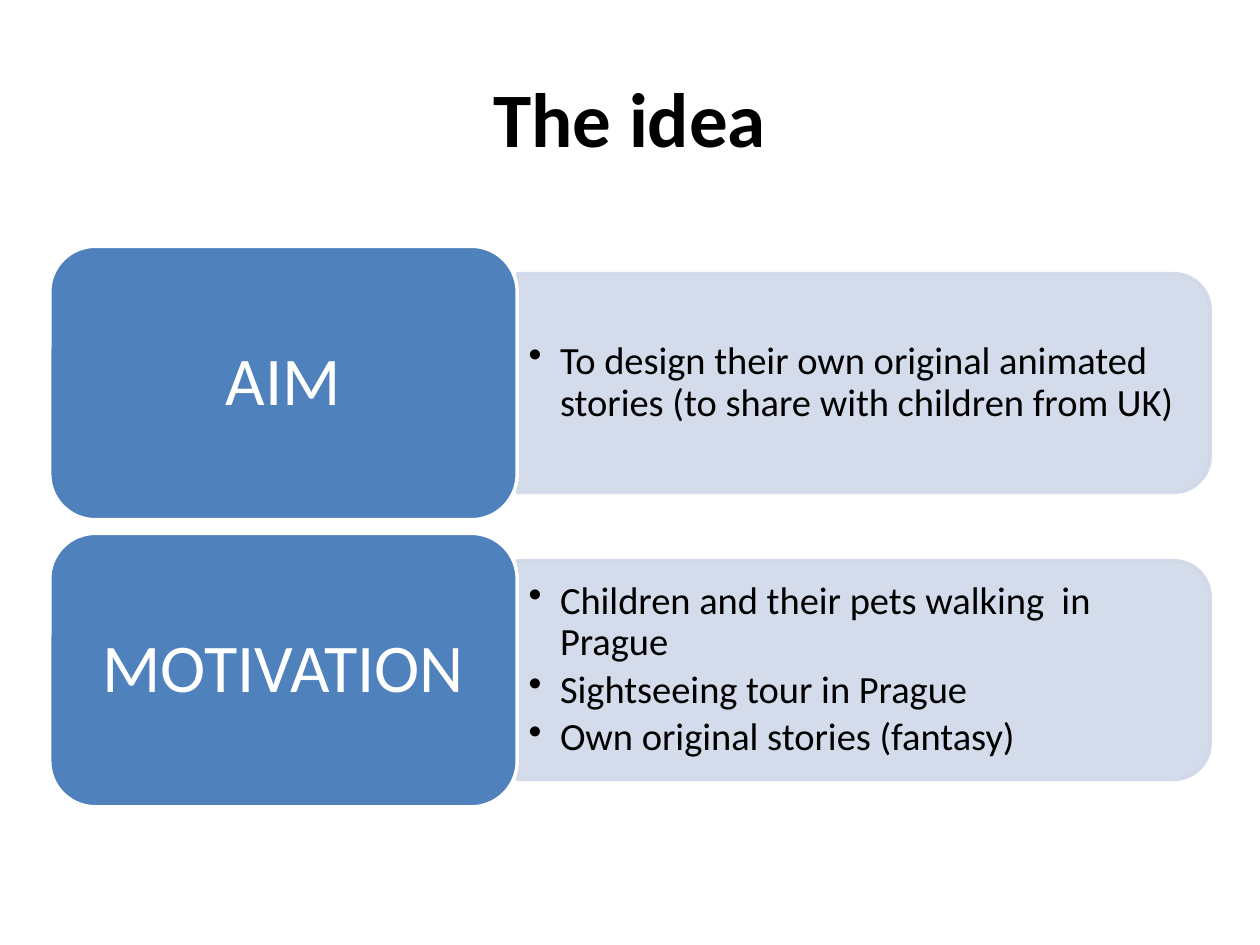
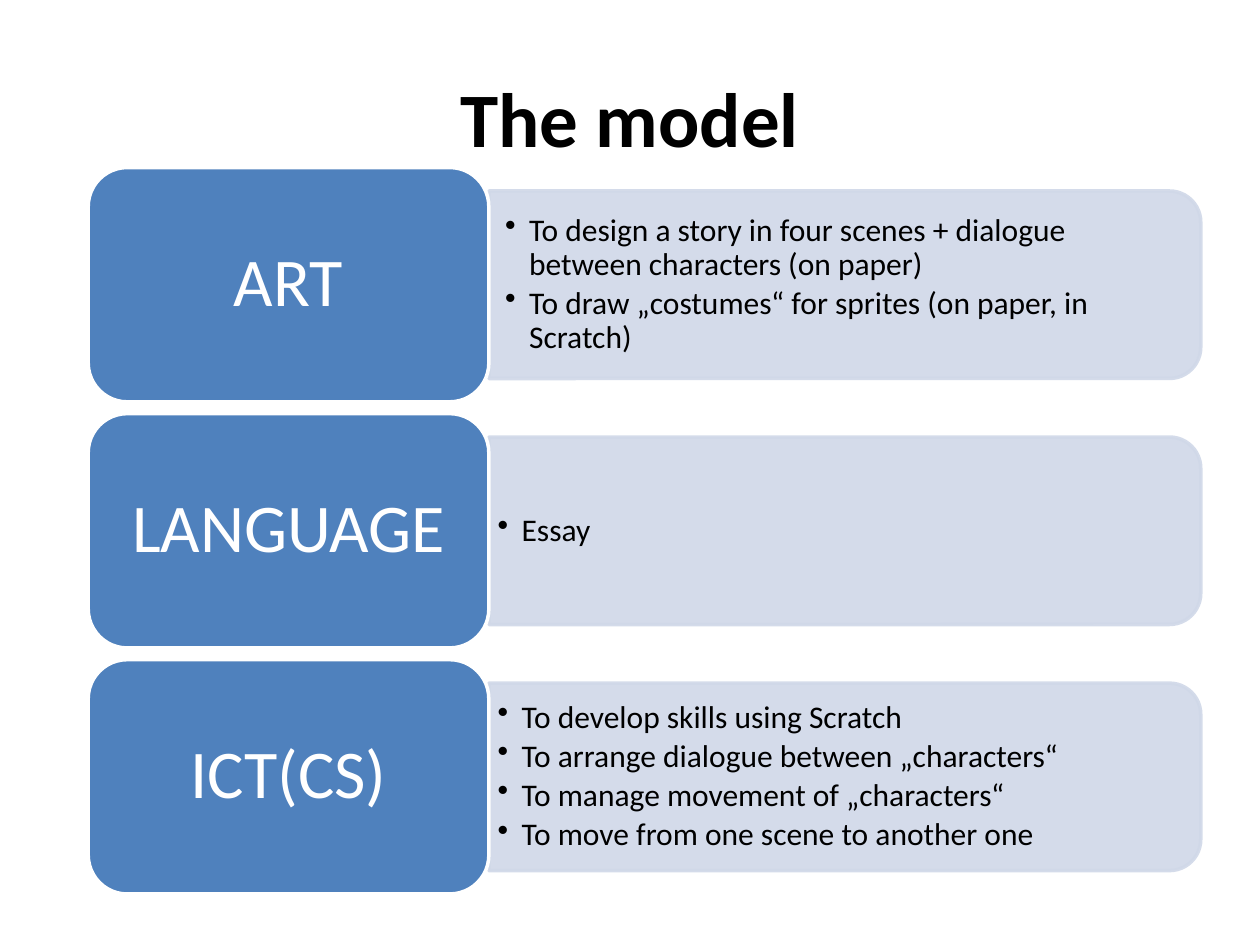
from lxml import etree
from pptx import Presentation
from pptx import util as u
from pptx.dml.color import RGBColor
from pptx.enum import shapes, text
from pptx.oxml import ns

# Shared style
BLACK = RGBColor(0x00, 0x00, 0x00)
WHITE = RGBColor(0xFF, 0xFF, 0xFF)
BLUE = RGBColor(0x4F, 0x81, 0xBD)
PALE_BLUE = RGBColor(0xD0, 0xD8, 0xE8)
FONT = "Calibri"

# The slide is a grid of 100 columns by 75 rows, with square cells
COLUMNS, ROWS = 100, 75
CELL = u.Inches(0.1)

PITCH = 1.05         # distance between rows, in tile heights
PANEL_HEIGHT = 0.8   # panel height, in tile heights
CORNER_INSET = 0.05  # text inset for rounded corners, in panel heights


def cells(count):
    return u.Emu(round(count * CELL))


def write(shape, lines, size, color=BLACK, bold=False, margin=1.0,
          align=text.PP_ALIGN.CENTER, line_spacing=None, bullet_indent=0):
    """Fill a shape with one paragraph per line of text."""
    frame = shape.text_frame
    frame.word_wrap = True
    frame.vertical_anchor = text.MSO_ANCHOR.MIDDLE
    frame.margin_left = frame.margin_right = cells(margin)
    frame.margin_top = frame.margin_bottom = cells(margin / 2)
    for index, line in enumerate(lines):
        paragraph = frame.add_paragraph() if index else frame.paragraphs[0]
        paragraph.alignment = align
        if line_spacing:
            paragraph.line_spacing = line_spacing
        if bullet_indent:
            paragraph.space_after = u.Pt(round(size * 0.16, 1))
            add_bullet(paragraph, cells(bullet_indent))
        run = paragraph.add_run()
        run.text = line
        run.font.name = FONT
        run.font.size = u.Pt(size)
        run.font.bold = bold
        run.font.color.rgb = color


def add_bullet(paragraph, indent):
    properties = paragraph._p.get_or_add_pPr()
    properties.set("marL", str(indent))
    properties.set("indent", str(-indent))
    etree.SubElement(properties, ns.qn("a:buChar"), char="•")


def set_opacity(shape, percent):
    """Make both the fill and the outline of a shape partly transparent."""
    for color in shape._element.spPr.iter(ns.qn("a:srgbClr")):
        etree.SubElement(color, ns.qn("a:alpha"), val=str(percent * 1000))


class Deck:
    def __init__(self):
        self.presentation = Presentation()
        self.presentation.slide_width = cells(COLUMNS)
        self.presentation.slide_height = cells(ROWS)
        self.slide = None

    def add_slide(self, title):
        layout = self.presentation.slide_layouts[6]
        self.slide = self.presentation.slides.add_slide(layout)
        write(self.text_box(5, 3, 90, 12.5), [title], 44, bold=True)

    def text_box(self, left, top, width, height):
        return self.slide.shapes.add_textbox(*map(cells, (left, top, width, height)))

    def block(self, kind, left, top, width, height, fill, line):
        shape = self.slide.shapes.add_shape(
            kind, *map(cells, (left, top, width, height)))
        shape.shadow.inherit = False
        shape.fill.solid()
        shape.fill.fore_color.rgb = fill
        shape.line.color.rgb = line
        shape.line.width = u.Pt(2)
        return shape

    def tile(self, left, top, width, height, label):
        tile = self.block(shapes.MSO_SHAPE.ROUNDED_RECTANGLE,
                          left, top, width, height, BLUE, WHITE)
        write(tile, [label], 39, WHITE, margin=1.6, line_spacing=0.9)

    def panel(self, left, top, width, height, points, size, indent, margin):
        # Turned a quarter, so that the rounded corners face right
        panel = self.block(shapes.MSO_SHAPE.ROUND_2_SAME_RECTANGLE,
                           left + (width - height) / 2, top - (width - height) / 2,
                           height, width, PALE_BLUE, PALE_BLUE)
        panel.rotation = 90
        set_opacity(panel, 90)
        inset = height * CORNER_INSET
        box = self.text_box(left, top + inset, width - inset, height - 2 * inset)
        write(box, points, size, align=text.PP_ALIGN.LEFT, margin=margin,
              line_spacing=0.9, bullet_indent=indent)

    def block_list(self, rows, left, top, tile_width, panel_width, tile_height,
                   size, indent):
        """Stack rows of a labelled tile with a panel of points beside it."""
        panel_height = tile_height * PANEL_HEIGHT
        for index, (label, margin, points) in enumerate(rows):
            row_top = top + index * tile_height * PITCH
            panel_top = row_top + (tile_height - panel_height) / 2
            self.panel(left + tile_width, panel_top, panel_width, panel_height,
                       points, size, indent, margin)
            self.tile(left, row_top, tile_width, tile_height, label)


# Each row: label, side margin of the points, points
IDEA = [
    ("AIM", 0.9, [
        "To design their own original animated stories "
        "(to share with children from UK)"]),
    ("MOTIVATION", 0.9, [
        "Children and their pets walking  in Prague",
        "Sightseeing tour in Prague",
        "Own original stories (fantasy)"]),
]
MODEL = [
    ("ART", 1.3, [
        "To design a story in four scenes + dialogue between characters (on paper)",
        "To draw „costumes“ for sprites (on paper, in Scratch)"]),
    ("LANGUAGE", 0.7, ["Essay"]),
    ("ICT(CS)", 0.7, [
        "To develop skills using Scratch",
        "To arrange dialogue between „characters“",
        "To manage movement of „characters“",
        "To move from one scene to another one"]),
]


def main():
    deck = Deck()

    # Slide 1: aim and motivation
    deck.add_slide("The idea")
    deck.block_list(IDEA, left=3.95, top=19.55, tile_width=37.1, panel_width=55,
                    tile_height=21.7, size=22, indent=2.5)

    # Slide 2: the three subjects
    deck.add_slide("The model")
    deck.block_list(MODEL, left=7, top=13.3, tile_width=31.8, panel_width=56.5,
                    tile_height=18.6, size=18, indent=1.9)

    deck.presentation.save("out.pptx")


if __name__ == "__main__":
    main()
